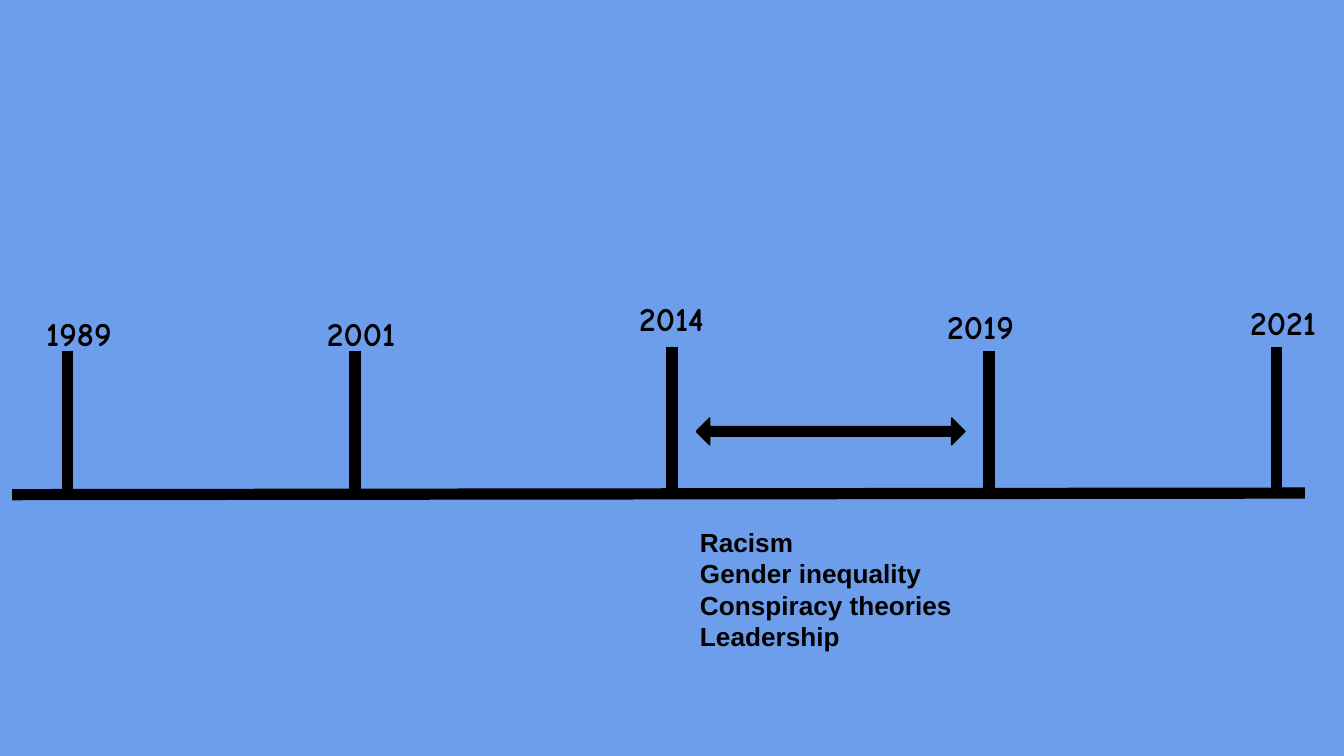
"""Build a timeline slide with five marked years and one highlighted period."""
from lxml import etree
from pptx import Presentation
from pptx.dml.color import RGBColor
from pptx.enum.shapes import MSO_CONNECTOR, MSO_SHAPE
from pptx.enum.text import PP_ALIGN
from pptx.oxml.ns import qn
from pptx.util import Cm, Pt

STRAIGHT = MSO_CONNECTOR.STRAIGHT
DOUBLE_ARROW = MSO_SHAPE.LEFT_RIGHT_ARROW
LEFT, CENTER, RIGHT = PP_ALIGN.LEFT, PP_ALIGN.CENTER, PP_ALIGN.RIGHT

COLORS = {"background": "6D9EEB", "ink": "000000"}
YEAR_FORMAT = {"name": "Comic Neue", "size": Pt(18), "bold": True}
TOPIC_FORMAT = {"name": "Arial", "size": Pt(14), "bold": True}
TICK_HEIGHT = 2.69
YEARS = [
    ("1989", 1.27, 6.63, (0.28, 5.66, 2.08, 1.47), RIGHT),
    ("2001", 6.71, 6.63, (5.64, 5.66, 2.08, 1.09), RIGHT),
    ("2014", 12.7, 6.55, (11.51, 5.38, 2.36, 1.09), CENTER),
    ("2019", 18.69, 6.63, (17.65, 5.54, 2.08, 1.09), LEFT),
    ("2021", 24.13, 6.55, (23.04, 5.46, 2.08, 1.47), RIGHT),
]
TOPICS = ["Racism", "Gender inequality", "Conspiracy theories", "Leadership"]


def color(name):
    return RGBColor.from_string(COLORS[name])


def add_line(page, *ends):
    line = page.shapes.add_connector(STRAIGHT, *map(Cm, ends))
    line.line.color.rgb = color("ink")
    line.line.width = Pt(6)
    etree.SubElement(line._element.spPr, qn("a:effectLst"))


def add_text(page, place, lines, text_format, alignment=LEFT):
    box = page.shapes.add_textbox(*map(Cm, place))
    frame = box.text_frame
    frame.word_wrap = True
    for side in ("left", "top", "right", "bottom"):
        setattr(frame, f"margin_{side}", Cm(0.25))
    for index, line in enumerate(lines):
        para = frame.add_paragraph() if index else frame.paragraphs[0]
        para.alignment = alignment
        span = para.add_run()
        span.text = line
        span.font.color.rgb = color("ink")
        for name, value in text_format.items():
            setattr(span.font, name, value)


def add_period_arrow(page, place):
    arrow = page.shapes.add_shape(DOUBLE_ARROW, *map(Cm, place))
    arrow.shadow.inherit = False
    arrow.adjustments[0] = 0.36
    arrow.adjustments[1] = 0.5
    arrow.fill.solid()
    arrow.fill.fore_color.rgb = color("ink")
    arrow.line.color.rgb = color("ink")
    arrow.line.width = Pt(0.75)


def main():
    deck = Presentation()
    deck.slide_width, deck.slide_height = Cm(25.4), Cm(14.29)
    page = deck.slides.add_slide(deck.slide_layouts[6])
    page.background.fill.solid()
    page.background.fill.fore_color.rgb = color("background")

    add_line(page, 0.23, 9.35, 24.66, 9.32)
    for year, x, top, place, alignment in YEARS:
        add_line(page, x, top, x, top + TICK_HEIGHT)
        add_text(page, place, [year], YEAR_FORMAT, alignment)
    add_period_arrow(page, (13.16, 7.9, 5.08, 0.51))
    add_text(page, (12.98, 9.7, 6.07, 3.2), TOPICS, TOPIC_FORMAT)
    deck.save("out.pptx")


if __name__ == "__main__":
    main()
